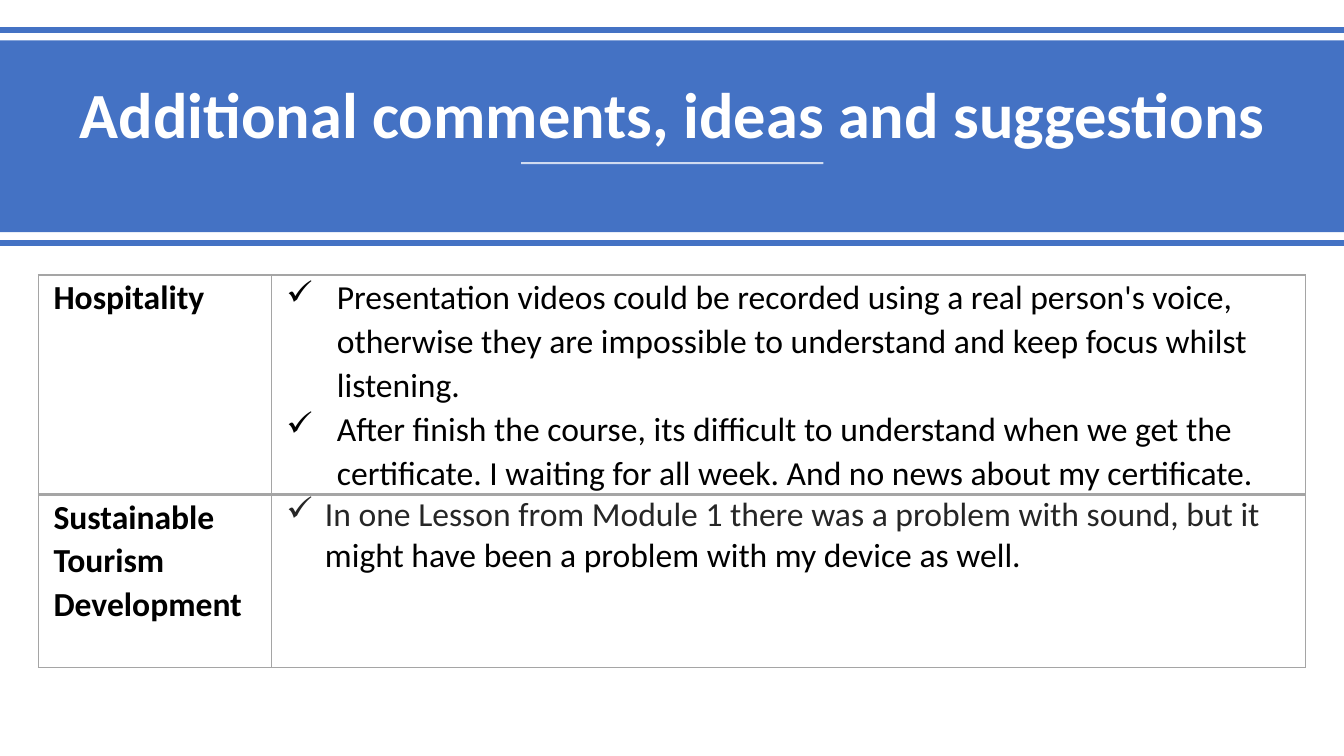
import lxml.etree
import pptx
import pptx.dml.color
import pptx.enum.shapes
import pptx.enum.text
import pptx.oxml
import pptx.oxml.ns
import pptx.util

Cm, Pt = pptx.util.Cm, pptx.util.Pt
qn = pptx.oxml.ns.qn
RGB = pptx.dml.color.RGBColor.from_string

THEME = {
    "blue": RGB("4472C4"),
    "white": RGB("FFFFFF"),
    "black": RGB("000000"),
    "soft_black": RGB("262626"),
    "grey": "A5A5A5",
    "font": "Calibri",
    "title_size": Pt(46),
    "body_size": Pt(24),
}


def set_format(target, values):
    """Set each attribute of target; a "color" entry sets its solid colour."""
    for name, value in values.items():
        if name == "color":
            target.color.rgb = value
        else:
            setattr(target, name, value)


def set_opacity(element, percent):
    color = next(element.iter(qn("a:srgbClr")))
    lxml.etree.SubElement(color, qn("a:alpha")).set("val", str(percent * 1000))


deck = pptx.Presentation()
deck.slide_width, deck.slide_height = Cm(33.87), Cm(19.05)
page = deck.slides.add_slide(deck.slide_layouts[5])

# Banner with its title
banner = page.shapes.add_shape(
    pptx.enum.shapes.MSO_SHAPE.RECTANGLE, 0, Cm(1.02), deck.slide_width, Cm(4.83))
banner.shadow.inherit = False
banner.fill.solid()
banner.fill.fore_color.rgb = THEME["blue"]
banner.line.fill.background()

title = page.shapes.title
title._element.getparent().append(title._element)
set_format(title, {"left": Cm(1.47), "top": Cm(1.37), "width": Cm(30.94), "height": Cm(2.59)})
set_format(title.text_frame, {
    "text": "Additional comments, ideas and suggestions",
    "word_wrap": True,
    "auto_size": pptx.enum.text.MSO_AUTO_SIZE.NONE,
    "vertical_anchor": pptx.enum.text.MSO_ANCHOR.BOTTOM,
})
para = title.text_frame.paragraphs[0]
set_format(para, {"alignment": pptx.enum.text.PP_ALIGN.CENTER, "line_spacing": 0.9})
set_format(para.font, {"name": THEME["font"], "size": THEME["title_size"],
                       "bold": True, "color": THEME["white"]})

# Rules: left, right, height on the page, colour, width, opacity
rules = [
    (0, deck.slide_width, Cm(0.76), THEME["blue"], Pt(4), 100),
    (Cm(13.13), Cm(20.75), Cm(4.11), THEME["white"], Pt(1.5), 75),
    (0, deck.slide_width, Cm(6.12), THEME["blue"], Pt(4), 100),
]
for left, right, y, color, width, opacity in rules:
    rule = page.shapes.add_connector(
        pptx.enum.shapes.MSO_CONNECTOR.STRAIGHT, left, y, right, y)
    set_format(rule.line, {"color": color, "width": width})
    lxml.etree.SubElement(rule._element.spPr, qn("a:effectLst"))
    if opacity < 100:
        set_opacity(rule._element.spPr, opacity)

# Comments by course: each paragraph is a list of (text, colour) spans
black = THEME["black"]
courses = [
    {"name": "Hospitality", "height": Cm(5.51), "indent": Cm(1.27), "spacing": 1.07,
     "comments": [
         [("Presentation videos could be recorded using a real person's voice, otherwise "
           "they are impossible to understand and keep focus whilst listening.", black)],
         [("After finish the course, its difficult to understand when we get the "
           "certificate. I waiting for all week. And no news about my certificate.", black)],
     ]},
    {"name": "Sustainable Tourism Development", "height": Cm(4.37), "indent": Cm(0.97),
     "spacing": 1.0,
     "comments": [
         [("In one Lesson from Module 1 there was a problem with sound, but it ",
           THEME["soft_black"]),
          ("might have been a problem with my device as well.", black)],
     ]},
]
table = page.shapes.add_table(
    len(courses), 2, Cm(0.97), Cm(6.93), Cm(31.93), Cm(9.88)).table
set_format(table, {"first_row": False, "horz_banding": False})
for column, width in zip(table.columns, (Cm(5.87), Cm(26.06))):
    column.width = width

for row_number, course in enumerate(courses):
    table.rows[row_number].height = course["height"]
    columns = [[[(course["name"], black)]], course["comments"]]
    for column_number, paragraphs in enumerate(columns):
        is_comment = column_number == 1
        cell = table.cell(row_number, column_number)
        set_format(cell, {"margin_left": Cm(0.38), "margin_right": Cm(0.38),
                          "margin_top": 0, "margin_bottom": 0})
        cell_format = cell._tc.get_or_add_tcPr()
        if row_number == 0:
            cell.fill.background()
        else:
            cell.fill.solid()
            cell.fill.fore_color.rgb = THEME["white"]
            set_opacity(cell_format, 20)

        inner_side = "B" if row_number == 0 else "T"
        for position, side in enumerate("LRTB"):
            width = Pt(2) if side == inner_side else Pt(1)
            border = pptx.oxml.parse_xml(
                f'<a:ln{side} {pptx.oxml.ns.nsdecls("a")} w="{width}"><a:solidFill>'
                f'<a:srgbClr val="{THEME["grey"]}"/></a:solidFill></a:ln{side}>')
            cell_format.insert(position, border)

        frame = cell.text_frame
        for number, spans in enumerate(paragraphs):
            para = frame.add_paragraph() if number else frame.paragraphs[0]
            if is_comment:
                para_format = para._p.get_or_add_pPr()
                para_format.set("marL", str(course["indent"]))
                para_format.set("indent", str(-course["indent"]))
                lxml.etree.SubElement(para_format, qn("a:buChar")).set("char", "✓")
            para.line_spacing = course["spacing"] if is_comment else 1.07
            for text, color in spans:
                span = para.add_run()
                span.text = text
                set_format(span.font, {"name": THEME["font"], "size": THEME["body_size"],
                                       "bold": not is_comment, "color": color})

deck.save("out.pptx")
